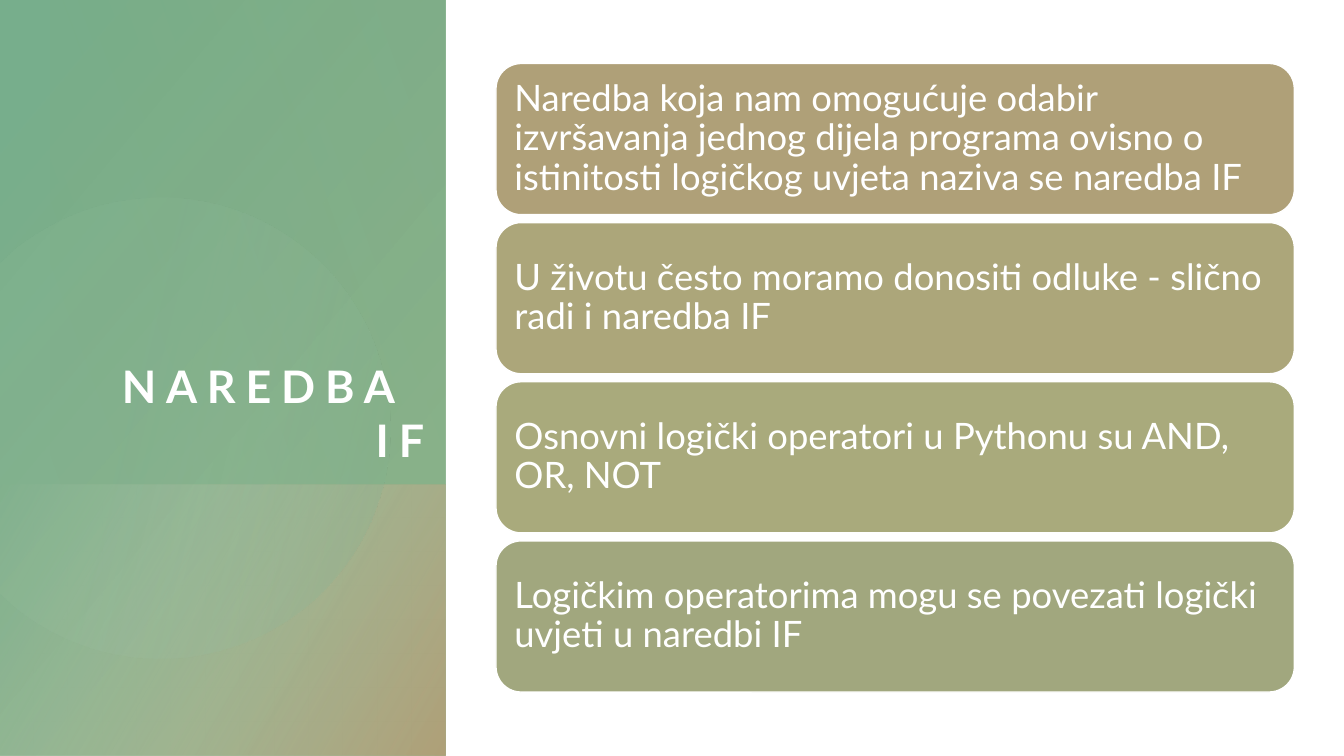
from pptx import Presentation
from pptx.dml.color import RGBColor
from pptx.enum.shapes import MSO_SHAPE as Kind
from pptx.enum.text import MSO_ANCHOR as Anchor, MSO_AUTO_SIZE as Fit, PP_ALIGN as Align
from pptx.oxml import parse_xml
from pptx.oxml.ns import nsdecls
from pptx.util import Cm, Pt

WIDE, HIGH = 33.87, 19.05
SIDE = 11.23   # width of the green panel
LOW = 6.83     # height of the band at its foot
WHITE = "FFFFFF"

CARDS = [
    ("AFA078", "Naredba koja nam omogućuje odabir izvršavanja jednog dijela programa ovisno "
               "o istinitosti logičkog uvjeta naziva se naredba IF"),
    ("ACA67A", "U životu često moramo donositi odluke - slično radi i naredba IF"),
    ("A9AA7C", "Osnovni logički operatori u Pythonu su AND, OR, NOT"),
    ("A1A77E", "Logičkim operatorima mogu se povezati logički uvjeti u naredbi IF"),
]

# Outline of the pale disc: each curve is two handles and an end point
START = (4.17, 4.98)
CURVES = [
    [(6.63, 5.03), (8.89, 6.68), (9.6, 9.19)],
    [(10.49, 12.27), (8.71, 15.49), (5.64, 16.36)],
    [(3.71, 16.92), (1.73, 16.43), (0.3, 15.24)],
    [(0, 14.96)],
    [(0, 6.63)],
    [(0.38, 6.27)],
    [(0.97, 5.82), (1.65, 5.44), (2.41, 5.21)],
    [(3, 5.05), (3.58, 4.98), START],
]


def color(code):
    return RGBColor.from_string(code)


def write(shape, text, size=26, bold=False, align=Align.LEFT, anchor=Anchor.MIDDLE,
          inset=0, lines=1.0, track=0):
    frame = shape.text_frame
    frame.word_wrap = True
    frame.auto_size = Fit.NONE
    frame.vertical_anchor = anchor
    frame.margin_left = frame.margin_right = Cm(inset)
    frame.margin_top = frame.margin_bottom = Cm(inset)
    frame.text = text
    para = frame.paragraphs[0]
    para.alignment = align
    para.line_spacing = lines
    for run in para.runs:
        font = run.font
        font.name, font.size, font.bold = "Lato", Pt(size), bold
        font.color.rgb = color(WHITE)
        if track:
            font._element.set("spc", str(track * 100))


def blend(shape, stops, angle):
    """Fill with a gradient of (place, colour, opacity) stops, in percent."""
    marks = "".join(
        f'<a:gs pos="{at * 1000}"><a:srgbClr val="{code}">'
        f'<a:alpha val="{part * 1000}"/></a:srgbClr></a:gs>'
        for at, code, part in stops)
    fill = parse_xml(
        f'<a:gradFill {nsdecls("a")} rotWithShape="1"><a:gsLst>{marks}</a:gsLst>'
        f'<a:lin ang="{angle * 60000}" scaled="0"/></a:gradFill>')
    shape.fill.background()
    old = shape._element.spPr.find("{*}noFill")
    old.getparent().replace(old, fill)
    shape.line.fill.background()
    shape.shadow.inherit = False


def wash(shapes, box, turn, stops, angle):
    """Mirrored rectangle, turned by a quarter so that it covers the box."""
    x, y, w, h = box
    left, top = x + (w - h) / 2, y + (h - w) / 2
    shape = shapes.add_shape(Kind.RECTANGLE, Cm(left), Cm(top), Cm(h), Cm(w))
    shape.rotation = turn
    shape._element.spPr.xfrm.set("flipH", "1")
    blend(shape, stops, angle)


def trace(start, curves, steps=24):
    points, last = [], start
    for curve in curves:
        if len(curve) == 1:
            points += curve
        else:
            one, two, end = curve
            for step in range(1, steps + 1):
                t = step / steps
                u = 1 - t
                points.append(tuple(
                    u**3 * a + 3 * u * u * t * b + 3 * u * t * t * c + t**3 * d
                    for a, b, c, d in zip(last, one, two, end)))
        last = curve[-1]
    return points


def disc(shapes, x, y):
    def place(point):
        return Cm(x + point[0]), Cm(y + point[1])

    path = shapes.build_freeform(*place(START))
    path.add_line_segments([place(p) for p in trace(START, CURVES)], close=True)
    blend(path.convert_to_shape(), [(36, "ADCEBA", 6), (100, "77AE8C", 26)], 14)


def panel(slide, x, y, w, h):
    shapes = slide.shapes
    # Layers of colour
    wash(shapes, (x, y, w, h), 270, [(8, "77AE8C", 100), (100, "83AC81", 89)], 50)
    wash(shapes, (x, y + h - LOW, w, LOW), 270,
         [(0, "B5CDB3", 0), (99, "AFA078", 100)], 60)
    disc(shapes, x, y)
    wash(shapes, (x + 1.27, y, w - 1.27, h - LOW), 90,
         [(0, "83AC81", 29), (100, "8DAA74", 0)], 110)
    # Title, brought in front of the layers
    title = shapes.title
    title.left, title.top = Cm(x + 1.27), Cm(y + 2.41)
    title.width, title.height = Cm(w - 1.81), Cm(9.35)
    write(title, "NAREDBA \vIF", size=32, bold=True, align=Align.RIGHT,
          anchor=Anchor.BOTTOM, track=7)
    title.element.getparent().append(title.element)


def stack(slide, x, y, w, h, gap=0.2):
    tall = (h - gap * (len(CARDS) - 1)) / len(CARDS)
    for i, (code, text) in enumerate(CARDS):
        top = y + i * (tall + gap)
        card = slide.shapes.add_shape(Kind.ROUNDED_RECTANGLE, Cm(x), Cm(top), Cm(w), Cm(tall))
        card.shadow.inherit = False
        card.fill.solid()
        card.fill.fore_color.rgb = color(code)
        card.line.color.rgb = color(WHITE)
        card.line.width = Pt(1)
        # The rounded corners add about 0.19 cm to the inset
        write(card, text, inset=0.28, lines=0.9)


def main():
    deck = Presentation()
    deck.slide_width, deck.slide_height = Cm(WIDE), Cm(HIGH)
    slide = deck.slides.add_slide(deck.slide_layouts[5])
    panel(slide, 0, 0, SIDE, HIGH)
    stack(slide, 12.5, 1.6, 20.12, 15.84)
    deck.save("out.pptx")


if __name__ == "__main__":
    main()
